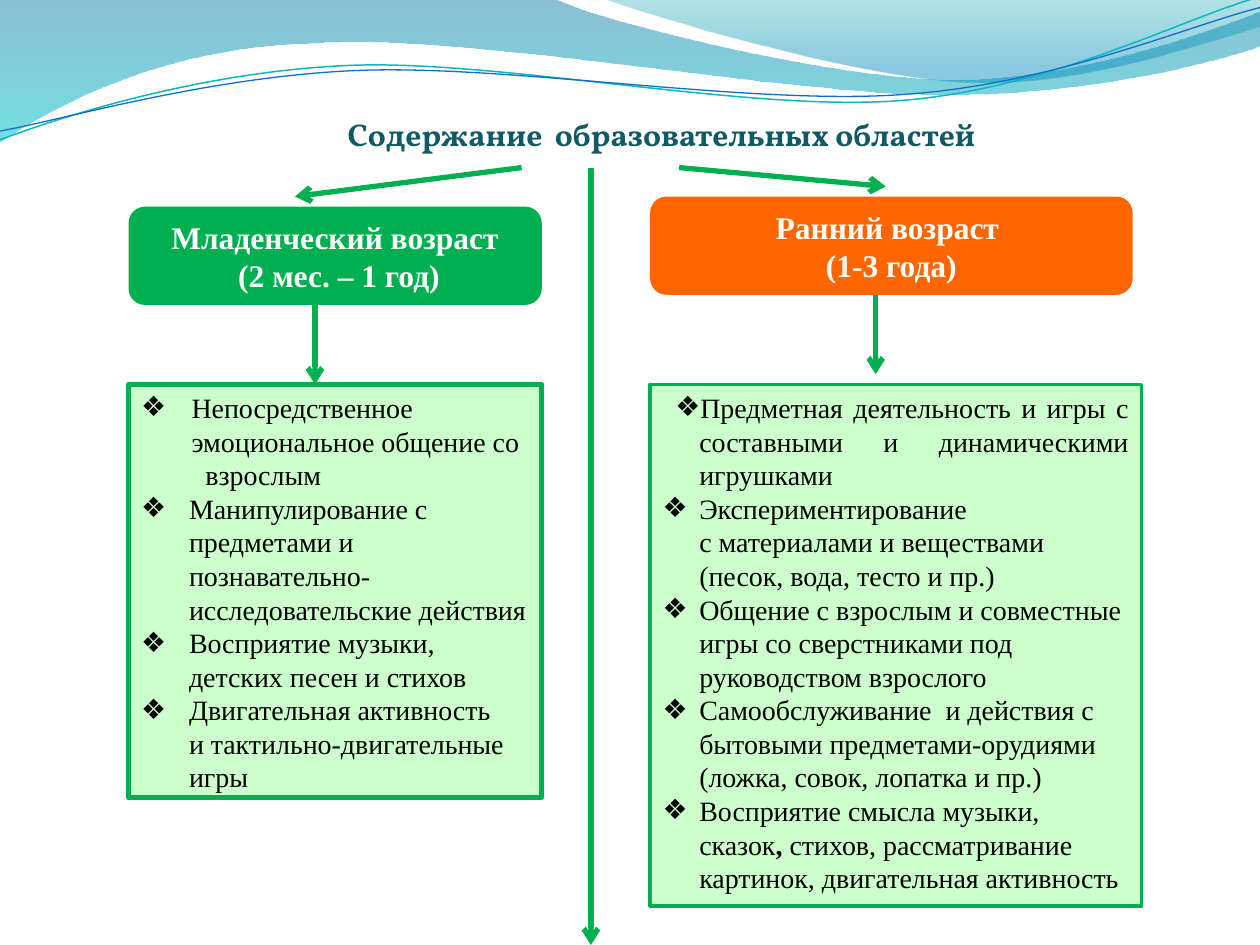
from copy import deepcopy

from lxml import etree
from pptx import Presentation
from pptx.dml.color import RGBColor
from pptx.enum.shapes import MSO_CONNECTOR, MSO_SHAPE
from pptx.enum.text import MSO_ANCHOR, MSO_AUTO_SIZE, PP_ALIGN
from pptx.oxml.ns import qn
from pptx.util import Inches, Pt

ROUNDED = MSO_SHAPE.ROUNDED_RECTANGLE
STRAIGHT = MSO_CONNECTOR.STRAIGHT
TOP = MSO_ANCHOR.TOP
NO_AUTOFIT = MSO_AUTO_SIZE.NONE
LEFT, CENTER, JUSTIFY = PP_ALIGN.LEFT, PP_ALIGN.CENTER, PP_ALIGN.JUSTIFY

COLORS = {
    "title": "115964", "green": "00B050", "orange": "FF6600", "mint": "CCFFCC",
    "white": "FFFFFF", "black": "000000", "teal_line": "0AB8BF", "blue_line": "0F6FC6",
    "deep_blue": "0074A1", "cyan": "00C6CF", "teal": "00A1A9", "sky": "008BBF",
}
TITLE_FONT, TEXT_FONT = "Vollkorn", "Times New Roman"

# Outlines: a pair is a straight segment, six numbers are a Bezier segment.
BROAD_WAVE = [
    (0, 0), (4.4, -0.01), (4.76, 0.17, 6.64, 0.63, 7.58, 0.63),
    (8.53, 0.63, 9.58, 0.26, 10, 0.09), (10.01, 0.36),
    (9.83, 0.44, 8.7, 0.76, 7.46, 0.75), (6.22, 0.75, 3.82, 0.28, 2.57, 0.34),
    (1.29, 0.36, 0.46, 0.83, -0.01, 1.13),
]
RIGHT_WAVE = [
    (4.79, -0.01), (5.09, 0.11, 6.82, 0.62, 7.69, 0.65),
    (8.56, 0.69, 9.61, 0.32, 10, 0.21), (10, 0),
]
TEAL_CURVE = [
    (0, 1.11), (0.48, 0.93, 1.58, 0.57, 2.77, 0.52),
    (3.95, 0.47, 5.93, 0.89, 7.13, 0.8), (8.33, 0.71, 9.38, 0.15, 9.98, -0.02),
]
BLUE_CURVE = [
    (0, 1.04), (0.47, 0.96, 1.64, 0.61, 2.83, 0.56),
    (4.03, 0.51, 5.97, 0.84, 7.17, 0.75), (8.36, 0.67, 9.41, 0.21, 10, 0.06),
]

# Each item is a tuple of runs; the second run of an item is bold.
INFANT_ITEMS = [
    ("Непосредственное эмоциональное общение со    взрослым",),
    ("Манипулирование с предметами и познавательно-исследовательские действия",),
    ("Восприятие музыки, детских песен и стихов",),
    ("Двигательная активность\vи тактильно-двигательные игры",),
]
TODDLER_ITEMS = [
    ("Предметная деятельность и игры с составными и динамическими игрушками",),
    ("Экспериментирование\vс материалами и веществами (песок, вода, тесто и пр.)",),
    ("Общение с взрослым и совместные игры со сверстниками под руководством взрослого",),
    ("Самообслуживание  и действия с бытовыми предметами-орудиями "
     "(ложка, совок, лопатка и пр.)",),
    ("Восприятие смысла музыки, сказок", ", ",
     "стихов, рассматривание картинок, двигательная активность"),
]
ARROWS = [
    ((2.5, 2.42), (2.5, 3.05)), ((6.95, 2.34), (6.95, 2.97)),
    ((5.39, 1.33), (7.03, 1.48)), ((4.14, 1.33), (2.34, 1.56)),
    ((4.69, 1.33), (4.69, 7.5)),
]


def rgb(name):
    return RGBColor.from_string(COLORS[name])


class SlideBuilder:
    def __init__(self, slide):
        self.slide = slide
        self.shapes = slide.shapes

    def place(self, sp, box):
        sp.left, sp.top, sp.width, sp.height = (Inches(v) for v in box)

    def format_runs(self, p, size, color, font=TEXT_FONT, bold=False):
        for r in p.runs:
            r.font.size, r.font.name, r.font.bold = Pt(size), font, bold
            r.font.color.rgb = rgb(color)
        for br in p._p.findall(qn("a:br")):
            br.append(deepcopy(p.runs[0]._r.rPr))

    def freeform(self, outline, close):
        """Join the segment ends, then bend the segments that have control points."""
        ends = [(Inches(seg[-2]), Inches(seg[-1])) for seg in outline]
        builder = self.shapes.build_freeform(*ends[0])
        builder.add_line_segments(ends[1:], close=close)
        sp = builder.convert_to_shape()
        sp.shadow.inherit = False
        lines = list(sp._element.spPr.iter(qn("a:lnTo")))
        for line, seg in zip(lines, outline[1:]):
            if len(seg) == 6:
                line.tag = qn("a:cubicBezTo")
                controls = [(seg[0], seg[1]), (seg[2], seg[3])]
                for i, (x, y) in enumerate(controls):
                    pt = etree.Element(qn("a:pt"), x=str(Inches(x) - sp.left),
                                       y=str(Inches(y) - sp.top))
                    line.insert(i, pt)
        return sp

    def wave(self, outline, stops):
        """Fill an outline from top to bottom; stops are (position, colour, opacity %)."""
        sp = self.freeform(outline, True)
        sp.line.fill.background()
        sp.fill.gradient()
        sp.fill.gradient_angle = 270
        for stop, (position, color, _) in zip(sp.fill.gradient_stops, stops):
            stop.position = position
            stop.color.rgb = rgb(color)
        for clr, (_, _, opacity) in zip(sp._element.spPr.iter(qn("a:srgbClr")), stops):
            etree.SubElement(clr, qn("a:alpha"), val=str(opacity * 1000))

    def curve(self, outline, color, width):
        sp = self.freeform(outline, False)
        sp.fill.background()
        sp.line.color.rgb = rgb(color)
        sp.line.width = Pt(width)

    def title(self, text, box):
        sp = self.shapes.title
        self.place(sp, box)
        tf = sp.text_frame
        tf.text = text
        tf.auto_size, tf.vertical_anchor = NO_AUTOFIT, TOP
        p = tf.paragraphs[0]
        p.alignment = LEFT
        self.format_runs(p, 18, "title", TITLE_FONT, True)

    def header(self, lines, box, color):
        sp = self.shapes.add_shape(ROUNDED, *(Inches(v) for v in box))
        sp.shadow.inherit = False
        sp.fill.solid()
        sp.fill.fore_color.rgb = rgb(color)
        sp.line.fill.background()
        tf = sp.text_frame
        tf.word_wrap = True
        tf.text = "\n".join(lines)
        for p in tf.paragraphs:
            p.alignment = CENTER
            self.format_runs(p, 18, "white", bold=True)

    def bullet_list(self, idx, items, box, line_width, indents, first_align=LEFT):
        """indents holds (margin, hanging) for the first item and for the others."""
        sp = self.slide.placeholders[idx]
        self.place(sp, box)
        sp.fill.solid()
        sp.fill.fore_color.rgb = rgb("mint")
        sp.line.color.rgb = rgb("green")
        sp.line.width = Pt(line_width)
        tf = sp.text_frame
        tf.auto_size, tf.vertical_anchor = NO_AUTOFIT, TOP
        for i, parts in enumerate(items):
            p = tf.paragraphs[0] if i == 0 else tf.add_paragraph()
            p.text = parts[0]
            for part in parts[1:]:
                p.add_run().text = part
            p.alignment = first_align if i == 0 else LEFT
            p.space_before = Pt(0)
            self.format_runs(p, 16, "black")
            if len(parts) > 1:
                p.runs[1].font.bold = True
            margin, hanging = indents[min(i, 1)]
            pPr = p._p.get_or_add_pPr()
            pPr.set("marL", str(Inches(margin)))
            pPr.set("indent", str(-Inches(hanging)))
            etree.SubElement(pPr, qn("a:buChar"), char="❖")

    def arrow(self, start, end):
        line = self.shapes.add_connector(STRAIGHT, *(Inches(v) for v in start + end))
        line.line.color.rgb = rgb("green")
        line.line.width = Pt(3)
        ln = line._element.spPr.find(qn("a:ln"))
        etree.SubElement(ln, qn("a:tailEnd"), type="arrow")
        etree.SubElement(line._element.spPr, qn("a:effectLst"))


def main():
    prs = Presentation()
    prs.slide_width, prs.slide_height = Inches(10), Inches(7.5)
    s = SlideBuilder(prs.slides.add_slide(prs.slide_layouts.get_by_name("Two Content")))

    s.wave(BROAD_WAVE, [(0, "deep_blue", 45), (1, "cyan", 55)])
    s.wave(RIGHT_WAVE, [(0, "teal", 30), (0.8, "sky", 45)])
    s.curve(TEAL_CURVE, "teal_line", 0.85)
    s.curve(BLUE_CURVE, "blue_line", 0.75)

    s.title("Содержание  образовательных областей", (2.66, 0.86, 5.23, 0.4))
    s.header(["Младенческий возраст", " (2 мес. – 1 год)"], (1.02, 1.64, 3.28, 0.78), "green")
    s.header(["Ранний возраст ", "(1-3 года)"], (5.16, 1.56, 3.83, 0.78), "orange")
    s.bullet_list(1, INFANT_ITEMS, (1.02, 3.05, 3.28, 3.28), 3, [(0.4, 0.4), (0.38, 0.38)])
    s.bullet_list(2, TODDLER_ITEMS, (5.16, 3.05, 3.9, 4.14), 2,
                  [(0.29, 0.19), (0.29, 0.29)], JUSTIFY)
    for start, end in ARROWS:
        s.arrow(start, end)
    prs.save("out.pptx")


if __name__ == "__main__":
    main()
